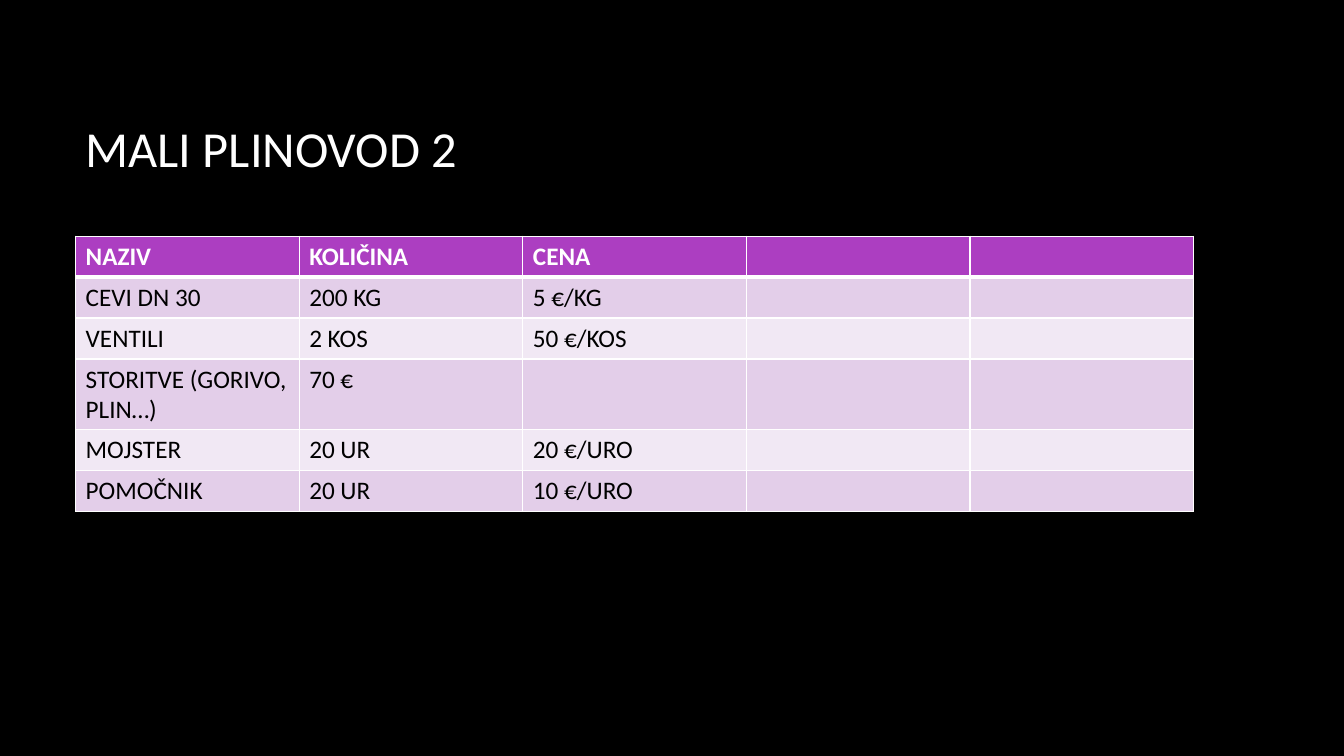
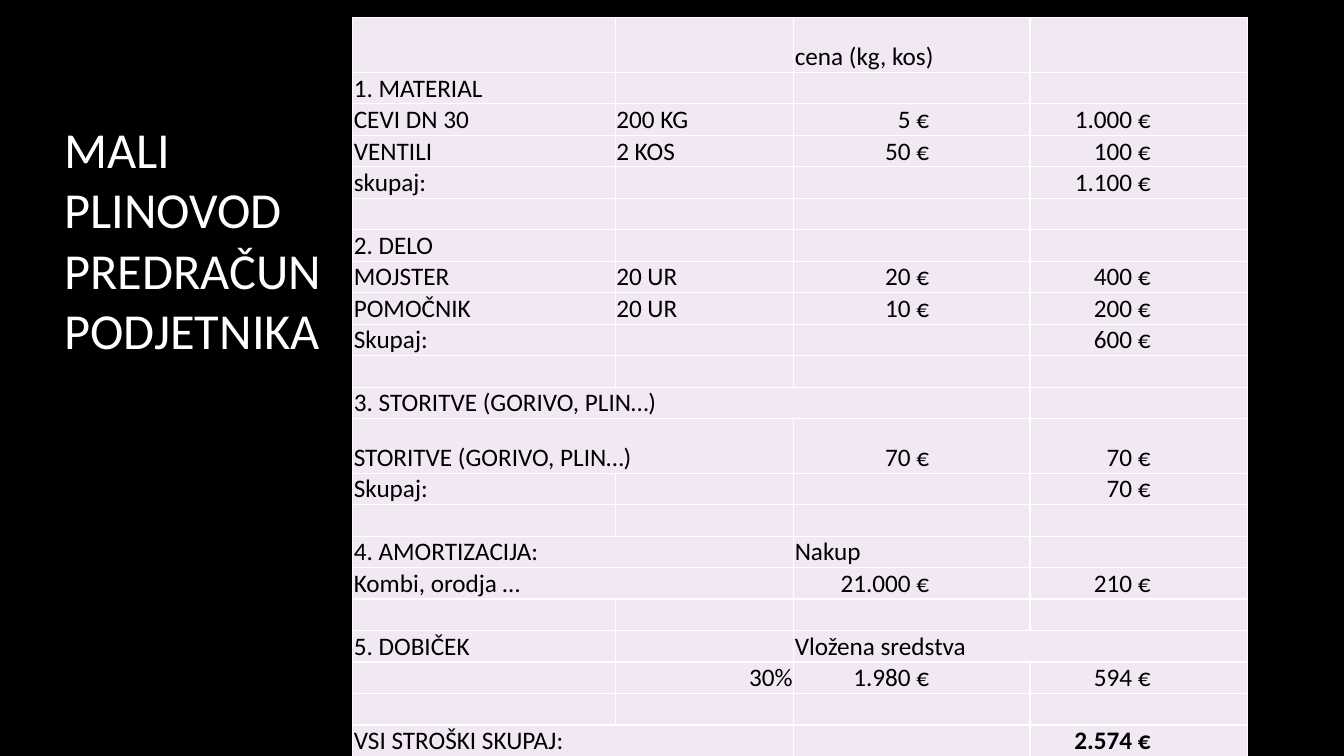
from dataclasses import dataclass, field

from lxml import etree
from pptx import Presentation
from pptx import util as u
from pptx.dml.color import RGBColor
from pptx.enum import text
from pptx.oxml import ns

# Shared look
FONT = "Calibri"
BLACK = RGBColor(0x00, 0x00, 0x00)
WHITE = RGBColor(0xFF, 0xFF, 0xFF)
PURPLE = RGBColor(0xAC, 0x3E, 0xC1)
LILAC = RGBColor(0xE3, 0xCE, 0xE9)
PALE = RGBColor(0xF1, 0xE8, 0xF4)
TITLE_PT, BODY_PT = 36, 18
THIN_PT, THICK_PT = 1, 3
BLANK_LAYOUT = 6


def px(n: int) -> u.Emu:
    return u.Emu(n * 9525)


@dataclass(frozen=True)
class Title:
    words: str
    left: int
    top: int
    width: int
    height: int


@dataclass(frozen=True)
class Grid:
    """Table content; None in a row continues the cell on its left."""
    left: int
    top: int
    col_widths: list[int]
    row_heights: list[int]
    rows: list[tuple[str | None, ...]]
    header: bool = False
    tight: bool = False
    bold_cells: set[tuple[int, int]] = field(default_factory=set)
    amount_insets: dict[int, int] = field(default_factory=dict)


# Slide content
PRICES = Grid(
    left=72, top=225, col_widths=[213] * 5, row_heights=[39] * 6, header=True,
    rows=[
        ("NAZIV", "KOLIČINA", "CENA"),
        ("CEVI DN 30", "200 KG", "5 €/KG"),
        ("VENTILI", "2 KOS", "50 €/KOS"),
        ("STORITVE (GORIVO, PLIN…)", "70 €"),
        ("MOJSTER", "20 UR", "20 €/URO"),
        ("POMOČNIK", "20 UR", "10 €/URO"),
    ],
)

ESTIMATE = Grid(
    left=336, top=17, col_widths=[250, 170, 225, 207],
    row_heights=[52] + [30] * 11 + [52] + [30] * 9,
    tight=True, bold_cells={(21, 3)}, amount_insets={1: 1, 2: 96, 3: 92},
    rows=[
        ("", "", "cena (kg, kos)"),
        ("1. MATERIAL",),
        ("CEVI DN 30", "200 KG", "5 €", "1.000 €"),
        ("VENTILI", "2 KOS", "50 €", "100 €"),
        ("skupaj:", "", "", "1.100 €"),
        (),
        ("2. DELO",),
        ("MOJSTER", "20 UR", "20 €", "400 €"),
        ("POMOČNIK", "20 UR", "10 €", "200 €"),
        ("Skupaj:", "", "", "600 €"),
        (),
        ("3. STORITVE (GORIVO, PLIN…)", None, None),
        ("STORITVE (GORIVO, PLIN…)", None, "70 €", "70 €"),
        ("Skupaj:", "", "", "70 €"),
        (),
        ("4. AMORTIZACIJA:", None, "Nakup"),
        ("Kombi, orodja …", None, "21.000 €", "210 €"),
        (),
        ("5. DOBIČEK", "", "Vložena sredstva", None),
        ("", "30%", "1.980 €", "594 €"),
        (),
        ("VSI STROŠKI SKUPAJ:", None, "", "2.574 €"),
    ],
)

SLIDES = [
    (Title("MALI PLINOVOD 2", 72, 64, 1064, 153), PRICES),
    (Title("MALI PLINOVOD PREDRAČUN PODJETNIKA", 52, 64, 272, 327), ESTIMATE),
]


def set_font(p, size: int, color: RGBColor, bold: bool = False) -> None:
    p.font.name = FONT
    p.font.size = u.Pt(size)
    p.font.bold = bold
    p.font.color.rgb = color


def set_borders(cell, top_pt: int, bottom_pt: int) -> None:
    tc_pr = cell._tc.get_or_add_tcPr()
    widths = {"L": THIN_PT, "R": THIN_PT, "T": top_pt, "B": bottom_pt}
    for side, points in widths.items():
        ln = etree.SubElement(tc_pr, ns.qn(f"a:ln{side}"), w=str(u.Pt(points)))
        fill = etree.SubElement(ln, ns.qn("a:solidFill"))
        etree.SubElement(fill, ns.qn("a:srgbClr"), val=str(WHITE))


def add_title(s, title: Title) -> None:
    sp = s.shapes.add_textbox(px(title.left), px(title.top), px(title.width), px(title.height))
    tf = sp.text_frame
    tf.word_wrap = True
    tf.vertical_anchor = text.MSO_ANCHOR.MIDDLE
    p = tf.paragraphs[0]
    p.text = title.words
    set_font(p, TITLE_PT, WHITE)


def style_cell(cell, grid: Grid, row: int, col: int, words: str) -> None:
    is_header = grid.header and row == 0
    if not cell.is_spanned:
        set_borders(cell,
                    THICK_PT if grid.header and row == 1 else THIN_PT,
                    THICK_PT if is_header else THIN_PT)
    cell.fill.solid()
    banded = grid.header and row % 2 == 1
    cell.fill.fore_color.rgb = PURPLE if is_header else LILAC if banded else PALE

    if grid.tight:
        cell.margin_left = cell.margin_right = px(1)
        cell.margin_top = cell.margin_bottom = 0
        cell.vertical_anchor = text.MSO_ANCHOR.BOTTOM
    p = cell.text_frame.paragraphs[0]
    if words:
        p.text = words
    if col in grid.amount_insets and words.endswith(("€", "%")):
        p.alignment = text.PP_ALIGN.RIGHT
        cell.margin_right = px(grid.amount_insets[col])
    set_font(p, BODY_PT, WHITE if is_header else BLACK,
             is_header or (row, col) in grid.bold_cells)


def add_grid(s, grid: Grid) -> None:
    n_rows, n_cols = len(grid.rows), len(grid.col_widths)
    table = s.shapes.add_table(n_rows, n_cols, px(grid.left), px(grid.top),
                               px(sum(grid.col_widths)), px(sum(grid.row_heights))).table
    table.first_row = table.horz_banding = False
    for column, width in zip(table.columns, grid.col_widths):
        column.width = px(width)
    for i, (height, words) in enumerate(zip(grid.row_heights, grid.rows)):
        table.rows[i].height = px(height)
        padded = words + ("",) * (n_cols - len(words))
        # Merge each cell with the None entries after it
        starts = [j for j, word in enumerate(padded) if word is not None]
        for start, end in zip(starts, starts[1:] + [n_cols]):
            if end - start > 1:
                table.cell(i, start).merge(table.cell(i, end - 1))
        for j, word in enumerate(padded):
            style_cell(table.cell(i, j), grid, i, j, word or "")


def main() -> None:
    prs = Presentation()
    prs.slide_width, prs.slide_height = px(1280), px(720)
    for title, grid in SLIDES:
        s = prs.slides.add_slide(prs.slide_layouts[BLANK_LAYOUT])
        s.background.fill.solid()
        s.background.fill.fore_color.rgb = BLACK
        add_title(s, title)
        add_grid(s, grid)
    prs.save("out.pptx")


if __name__ == "__main__":
    main()
